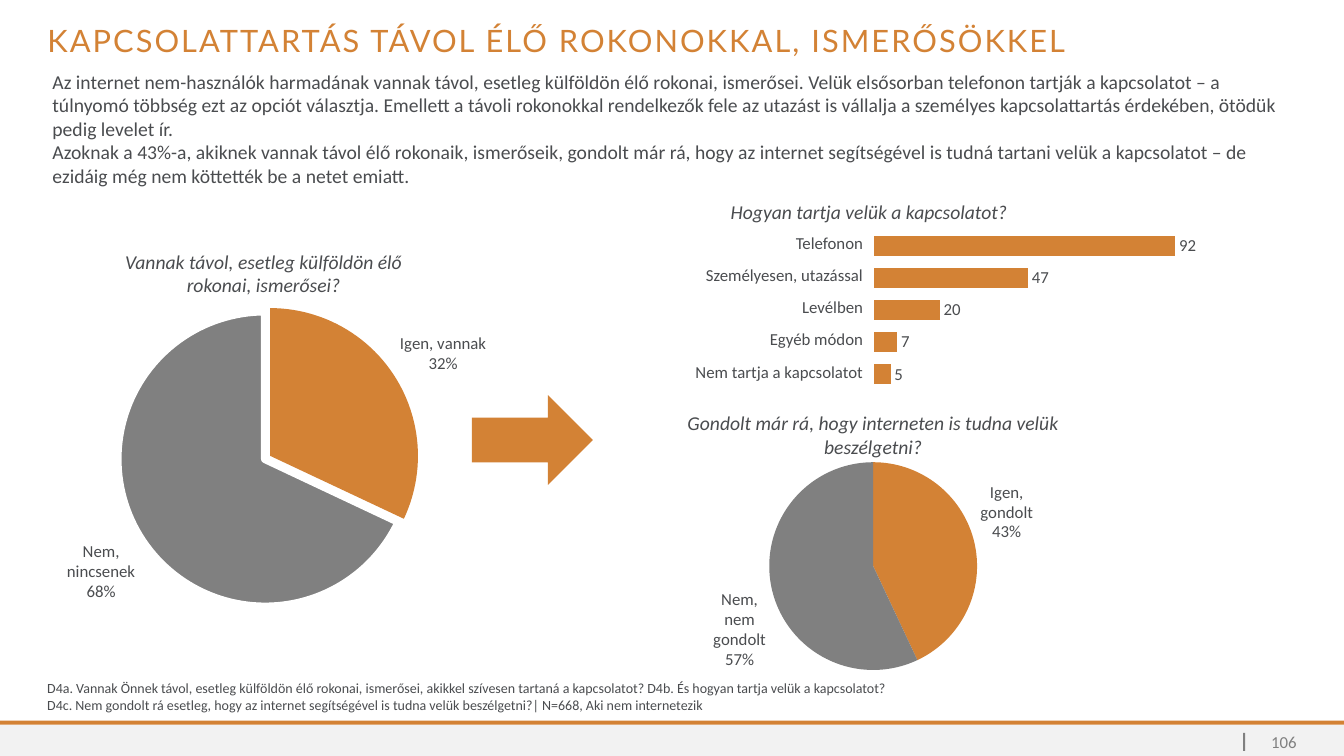
from dataclasses import dataclass

from lxml.etree import SubElement
from pptx import Presentation
from pptx.chart.data import CategoryChartData
from pptx.dml.color import RGBColor
from pptx.enum.chart import XL_CHART_TYPE as ChartKind, XL_LABEL_POSITION as LabelPlace
from pptx.enum.shapes import MSO_SHAPE as Preset
from pptx.enum.text import MSO_ANCHOR as Anchor, MSO_AUTO_SIZE as AutoSize, PP_ALIGN as Align
from pptx.oxml import parse_xml
from pptx.oxml.ns import nsdecls, qn
from pptx.util import Inches, Pt

ORANGE, GREY, INK, PALE, WHITE = "D38235", "808080", "4A4C4F", "F2F2F2", "FFFFFF"
Frame = tuple[float, float, float, float]


@dataclass
class Block:
    frame: Frame
    preset: Preset
    color: str


@dataclass
class Label:
    frame: Frame
    text: str
    size: float
    color: str = INK
    align: Align = Align.LEFT
    italic: bool = False
    anchor: Anchor = Anchor.TOP


@dataclass
class Pie:
    frame: Frame
    values: dict[str, int]
    offsets: tuple[int, int]
    border: float = 0


BLOCKS = [
    Block((0, 7.19, 13.33, 0.31), Preset.RECTANGLE, PALE),
    Block((0, 7.15, 13.33, 0.04), Preset.RECTANGLE, ORANGE),
    Block((12.33, 7.27, 0.02, 0.18), Preset.RECTANGLE, GREY),
    Block((4.68, 3.92, 1.2, 0.89), Preset.RIGHT_ARROW, ORANGE),
]
PIES = [
    Pie((6.9, 4.3, 3.55, 2.58), {"Igen, gondolt": 43, "Nem, nem gondolt": 57}, (0, 0)),
    Pie((0.21, 2.65, 4.98, 3.67), {"Igen, vannak": 32, "Nem, nincsenek": 68}, (0, 4), 6),
]
CONTACTS = {
    "Telefonon": 92,
    "Személyesen, utazással": 47,
    "Levélben": 20,
    "Egyéb módon": 7,
    "Nem tartja a kapcsolatot": 5,
}
TITLE = Label((0.37, 0.21, 12.6, 0.46), "KAPCSOLATTARTÁS TÁVOL ÉLŐ ROKONOKKAL, ISMERŐSÖKKEL", 22, ORANGE)
SUMMARY = Label(
    (0.42, 0.64, 12.54, 1.04),
    "Az internet nem-használók harmadának vannak távol, esetleg külföldön élő rokonai, ismerősei. "
    "Velük elsősorban telefonon tartják a kapcsolatot – a túlnyomó többség ezt az opciót választja. "
    "Emellett a távoli rokonokkal rendelkezők fele az utazást is vállalja a személyes kapcsolattartás "
    "érdekében, ötödük pedig levelet ír.\n"
    "Azoknak a 43%-a, akiknek vannak távol élő rokonaik, ismerőseik, gondolt már rá, hogy az internet "
    "segítségével is tudná tartani velük a kapcsolatot – de ezidáig még nem köttették be a netet emiatt.",
    14,
)
LABELS = [
    Label(
        (0.37, 6.69, 12.59, 0.44),
        "D4a. Vannak Önnek távol, esetleg külföldön élő rokonai, ismerősei, akikkel szívesen tartaná "
        "a kapcsolatot? D4b. És hogyan tartja velük a kapcsolatot?\n"
        "D4c. Nem gondolt rá esetleg, hogy az internet segítségével is tudna velük beszélgetni?"
        "| N=668, Aki nem internetezik",
        10,
    ),
    Label((0.84, 2.43, 3.55, 0.57), "Vannak távol, esetleg külföldön élő rokonai, ismerősei?",
          14, align=Align.CENTER, italic=True),
    Label((6.58, 1.93, 4.08, 0.34), "Hogyan tartja velük a kapcsolatot?",
          14, align=Align.CENTER, italic=True),
    Label((6.62, 4.03, 4.08, 0.57), "Gondolt már rá, hogy interneten is tudna velük beszélgetni?",
          14, align=Align.CENTER, italic=True),
    Label((12.49, 7.27, 0.47, 0.18), "106", 12, GREY, Align.RIGHT, anchor=Anchor.MIDDLE),
]


def rgb(color: str) -> RGBColor:
    return RGBColor.from_string(color)


def inches(frame: Frame) -> list[int]:
    return [Inches(length) for length in frame]


def style_font(font, size: float, color: str = INK, name: str = "Calibri") -> None:
    font.size, font.name = Pt(size), name
    font.color.rgb = rgb(color)


def write(box, label: Label, name: str = "Calibri") -> None:
    box.left, box.top, box.width, box.height = inches(label.frame)
    text = box.text_frame
    text.text = label.text
    text.word_wrap, text.auto_size = True, AutoSize.NONE
    text.vertical_anchor = label.anchor
    for para in text.paragraphs:
        para.alignment = label.align
        para.space_before = Pt(0)
        for span in para.runs:
            style_font(span.font, label.size, label.color, name)
            span.font.italic = label.italic


def add_block(page, block: Block) -> None:
    shape = page.shapes.add_shape(block.preset, *inches(block.frame))
    shape.shadow.inherit = False
    shape.fill.solid()
    shape.fill.fore_color.rgb = rgb(block.color)
    shape.line.fill.background()


def add_chart(page, kind: ChartKind, frame: Frame, values: dict[str, int], layout: Frame):
    data = CategoryChartData(number_format="0")
    data.categories = list(values)
    data.add_series("Series 1", list(values.values()))
    chart = page.shapes.add_chart(kind, *inches(frame), data).chart
    chart.has_legend = chart.has_title = False
    style_font(chart.font, 12)
    area = chart.plots[0]._element.getparent()
    for old in area.findall(qn("c:layout")):
        area.remove(old)
    sides = "".join(f'<c:{side} val="{part}"/>' for side, part in zip("xywh", layout))
    area.insert(0, parse_xml(
        f'<c:layout {nsdecls("c")}><c:manualLayout><c:layoutTarget val="inner"/>'
        f'<c:xMode val="edge"/><c:yMode val="edge"/>{sides}</c:manualLayout></c:layout>'
    ))
    plot = chart.plots[0]
    plot.has_data_labels = True
    labels = plot.data_labels
    style_font(labels.font, 12)
    labels.position = LabelPlace.OUTSIDE_END
    return chart


def explosion(amount: int):
    return parse_xml(f'<c:explosion {nsdecls("c")} val="{amount}"/>')


def add_pie(page, pie: Pie) -> None:
    chart = add_chart(page, ChartKind.PIE, pie.frame, pie.values, (0.168, 0.095, 0.656, 0.831))
    plot = chart.plots[0]
    plot.vary_by_categories = True
    labels = plot.data_labels
    labels.show_value = False
    labels.show_percentage = labels.show_category_name = True
    labels.number_format, labels.number_format_is_linked = "0%", False
    separator = parse_xml(f'<c:separator {nsdecls("c")}>\n</c:separator>')
    labels._element.find(qn("c:showBubbleSize")).addnext(separator)
    series = plot.series[0]
    for index, (color, offset) in enumerate(zip((ORANGE, GREY), pie.offsets)):
        look = series.points[index].format
        look.fill.solid()
        look.fill.fore_color.rgb = rgb(color)
        if offset and pie.border:
            look.line.color.rgb = rgb(WHITE)
            look.line.width = Pt(pie.border)
        else:
            look.line.fill.background()
        point = series._element.findall(qn("c:dPt"))[index]
        point.find(qn("c:spPr")).addprevious(explosion(offset))
    series._element.find(qn("c:dPt")).addprevious(explosion(4))


def add_bars(page) -> None:
    numbered = {str(rank): value for rank, value in enumerate(CONTACTS.values(), 1)}
    chart = add_chart(page, ChartKind.BAR_CLUSTERED, (8.67, 2.26, 3.54, 1.62), numbered,
                      (0, 0.011, 0.917, 0.986))
    plot = chart.plots[0]
    plot.gap_width, plot.vary_by_categories = 60, False
    plot.data_labels.show_value = True
    fill = plot.series[0].format.fill
    fill.solid()
    fill.fore_color.rgb = rgb(ORANGE)
    chart.category_axis.reverse_order = True
    scale = chart.value_axis
    scale.minimum_scale, scale.maximum_scale, scale.major_unit = 0, 100, 10
    scale.has_major_gridlines = False
    scale.visible = chart.category_axis.visible = False


def add_contact_table(page) -> None:
    table = page.shapes.add_table(len(CONTACTS), 1, *inches((6.65, 2.25, 1.92, 1.6))).table
    table.first_row = table.horz_banding = False
    for row, name in enumerate(CONTACTS):
        cell = table.cell(row, 0)
        cell.text = name
        cell.fill.background()
        cell.vertical_anchor = Anchor.MIDDLE
        cell.margin_left = cell.margin_right = cell.margin_top = Inches(0.01)
        cell.margin_bottom = 0
        para = cell.text_frame.paragraphs[0]
        para.alignment = Align.RIGHT
        style_font(para.runs[0].font, 12)


def main() -> None:
    deck = Presentation()
    deck.slide_width, deck.slide_height = Inches(13.33), Inches(7.5)
    page = deck.slides.add_slide(deck.slide_layouts[1])
    title, body = page.shapes.title, page.placeholders[1]
    write(title, TITLE, "Lato")
    heading = title.text_frame.paragraphs[0]
    heading.line_spacing = 0.9
    heading.runs[0]._r.get_or_add_rPr().set("spc", "150")
    write(body, SUMMARY)
    for para in body.text_frame.paragraphs:
        settings = para._p.get_or_add_pPr()
        settings.set("marL", "0")
        settings.set("indent", "0")
        SubElement(settings, qn("a:buNone"))
    for pie in PIES:
        add_pie(page, pie)
    add_bars(page)
    add_contact_table(page)
    for block in BLOCKS:
        add_block(page, block)
    for label in LABELS:
        write(page.shapes.add_textbox(*inches(label.frame)), label)
    deck.save("out.pptx")


if __name__ == "__main__":
    main()
